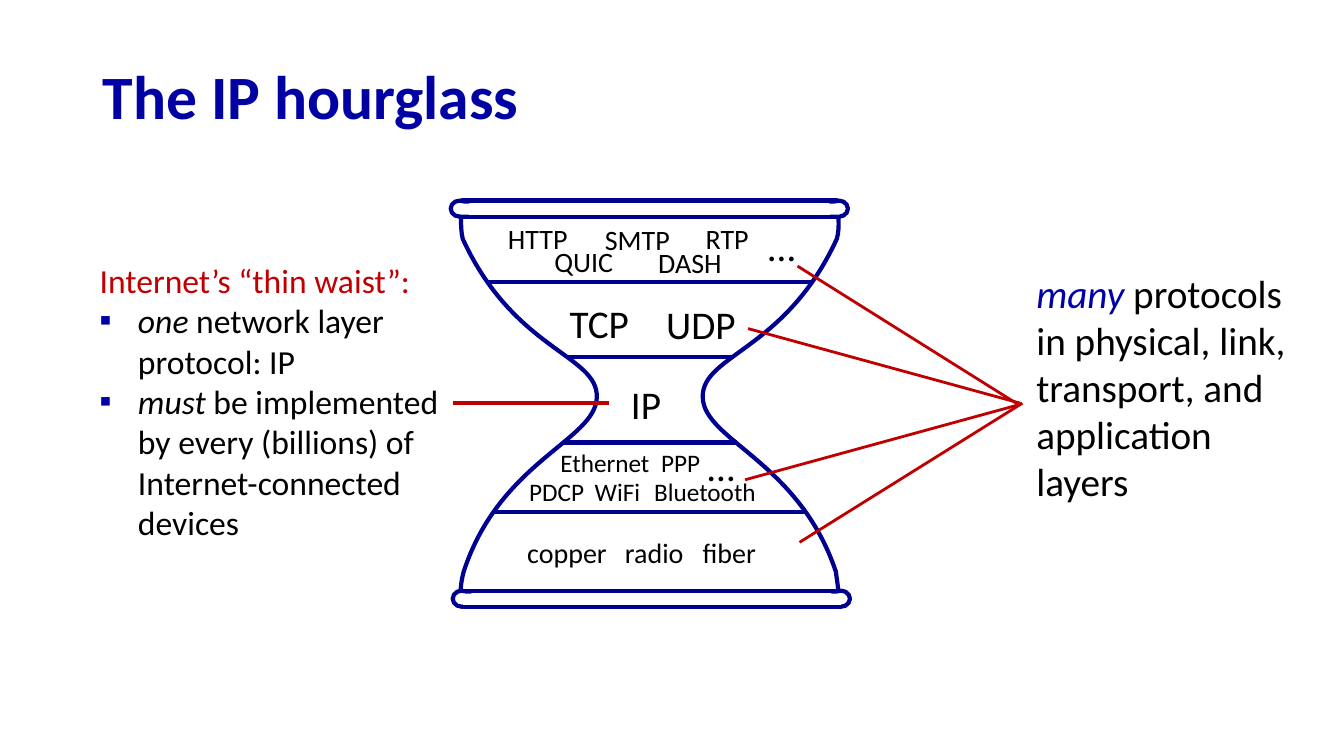
from lxml import etree
from pptx import Presentation
from pptx.dml.color import RGBColor
from pptx.enum.shapes import MSO_CONNECTOR as CONNECTOR, MSO_SHAPE as SHAPE
from pptx.enum.text import MSO_ANCHOR as ANCHOR, MSO_AUTO_SIZE as AUTO_SIZE
from pptx.oxml.ns import qn
from pptx.util import Pt

PX = 9144  # 100 px to the inch
FONT = "Calibri"
COLORS = {"title": "0000A3", "glass": "000090", "accent": "0000A8",
          "red": "C00000", "black": "000000", "white": "FFFFFF"}
LABEL_HEIGHTS = {28: 57, 20: 44, 18: 40}

# text, left, top, width
FITTED_LABELS = {
    28: [("IP", 616, 372, 50), ("TCP", 555, 292, 89), ("UDP", 651, 293, 90)],
    20: [("HTTP", 494, 215, 80), ("SMTP", 590, 216, 85), ("QUIC", 540, 238, 79),
         ("DASH", 643, 239, 84), ("RTP", 690, 215, 63)],
}
WRAPPED_LABELS = {
    28: [("…", 752, 216, 56), ("…", 692, 434, 56)],
    18: [("Ethernet", 546, 439, 134), ("PPP", 646, 439, 66), ("PDCP", 515, 468, 84),
         ("WiFi", 580, 468, 89), ("Bluetooth", 639, 468, 130)],
}
# Start point, then control, control, end for each Bézier piece
GLASS_SIDES = [
    [(458, 198), (458, 208), (456, 225), (459, 237), (510, 348), (593, 352), (592, 394),
     (591, 437), (496, 457), (460, 567), (456, 582), (457, 589), (457, 599)],
    [(831, 198), (830, 211), (834, 222), (830, 237), (779, 348), (696, 352), (697, 394),
     (698, 437), (792, 457), (829, 567), (831, 582), (832, 584), (831, 597)],
]
LAYER_LINES = [(483, 806, 280), (563, 728, 354), (558, 731, 439), (490, 800, 508)]
RIMS = [(458, 199), (460, 586)]
MANY_LINES = [(793, 538, 1014, 400), (1011, 402, 791, 264),
              (1012, 400, 742, 326), (1009, 402, 739, 476)]


class SlideBuilder:
    def __init__(self, slide):
        self.shapes = slide.shapes

    @staticmethod
    def color(name):
        return RGBColor.from_string(COLORS[name])

    def stroke(self, shape, color, width):
        shape.line.color.rgb = self.color(color)
        shape.line.width = Pt(width)

    def box(self, kind, left, top, width, height, outlined=True):
        shape = self.shapes.add_shape(kind, left * PX, top * PX, width * PX, height * PX)
        shape.shadow.inherit = False
        shape.fill.solid()
        shape.fill.fore_color.rgb = self.color("white")
        if outlined:
            self.stroke(shape, "glass", 3)
        else:
            shape.line.fill.background()

    def curve(self, nodes):
        """Build a polyline on the nodes, then turn each three segments into a Bézier."""
        builder = self.shapes.build_freeform(*nodes[0], scale=PX)
        builder.add_line_segments(nodes[1:], close=False)
        shape = builder.convert_to_shape()
        shape.shadow.inherit = False
        shape.fill.background()
        self.stroke(shape, "glass", 3)
        segments = list(shape._element.iter(qn("a:lnTo")))
        outline = segments[0].getparent()
        for first in range(0, len(segments), 3):
            bezier = etree.SubElement(outline, qn("a:cubicBezTo"))
            for segment in segments[first:first + 3]:
                bezier.append(segment[0])
                outline.remove(segment)

    def line(self, x1, y1, x2, y2, color, width):
        connector = self.shapes.add_connector(
            CONNECTOR.STRAIGHT, x1 * PX, y1 * PX, x2 * PX, y2 * PX)
        self.stroke(connector, color, width)
        etree.SubElement(connector._element.spPr, qn("a:effectLst"))

    def rim(self, left, top):
        """Draw a bar with rounded ends, hiding the inner half of each end."""
        self.box(SHAPE.RECTANGLE, left, top, 372, 16)
        for end, cover in ((-11, -1), (365, 350)):
            self.box(SHAPE.OVAL, left + end, top, 18, 16)
            self.box(SHAPE.RECTANGLE, left + cover, top + 3, 24, 11, outlined=False)

    def text(self, left, top, width, height, paragraphs, size, wrap=True):
        """Each paragraph is a list of (text, color, italic) runs."""
        shape = self.shapes.add_textbox(left * PX, top * PX, width * PX, height * PX)
        frame = shape.text_frame
        frame.word_wrap = wrap
        frame.auto_size = AUTO_SIZE.SHAPE_TO_FIT_TEXT
        for number, runs in enumerate(paragraphs):
            paragraph = frame.add_paragraph() if number else frame.paragraphs[0]
            for text, color, italic in runs:
                run = paragraph.add_run()
                run.text = text
                run.font.name = FONT
                run.font.size = Pt(size)
                run.font.italic = italic
                run.font.color.rgb = self.color(color)
        return frame

    def labels(self, groups, wrap):
        for size, entries in groups.items():
            for text, left, top, width in entries:
                self.text(left, top, width, LABEL_HEIGHTS[size],
                          [[(text, "black", False)]], size, wrap)

    def tab_stops(self, paragraph, positions):
        stops = etree.SubElement(paragraph._p.get_or_add_pPr(), qn("a:tabLst"))
        for position in positions:
            etree.SubElement(stops, qn("a:tab"), pos=str(position * PX), algn="l")

    def bullet(self, paragraph):
        properties = paragraph._p.get_or_add_pPr()
        properties.set("marL", str(38 * PX))
        properties.set("indent", str(-38 * PX))
        bullet_color = etree.SubElement(properties, qn("a:buClr"))
        etree.SubElement(bullet_color, qn("a:srgbClr"), val=COLORS["accent"])
        etree.SubElement(properties, qn("a:buFont"), typeface=FONT)
        etree.SubElement(properties, qn("a:buChar"), char="▪")


def main():
    presentation = Presentation()
    presentation.slide_width = 1333 * PX
    presentation.slide_height = 750 * PX
    builder = SlideBuilder(presentation.slides.add_slide(presentation.slide_layouts[6]))

    title = builder.text(92, 50, 1150, 98, [[("The IP hourglass", "title", False)]], 44)
    title.auto_size = AUTO_SIZE.NONE
    title.vertical_anchor = ANCHOR.MIDDLE
    title.paragraphs[0].line_spacing = 0.9
    title.paragraphs[0].runs[0].font.bold = True

    for side in GLASS_SIDES:
        builder.curve(side)
    for left, right, y in LAYER_LINES:
        builder.line(left, y, right, y, "glass", 3)
    for left, top in RIMS:
        builder.rim(left, top)
    builder.labels(FITTED_LABELS, wrap=False)
    builder.labels(WRAPPED_LABELS, wrap=True)
    media = builder.text(513, 526, 289, 44,
                         [[("copper\tradio\tfiber", "black", False)]], 20)
    builder.tab_stops(media.paragraphs[0], (97, 174))

    waist = builder.text(89, 253, 361, 293, [
        [("Internet’s “thin waist”:", "red", False)],
        [("one", "black", True), (" network layer protocol: IP", "black", False)],
        [("must", "black", True),
         (" be implemented by every (billions) of Internet-connected devices",
          "black", False)],
    ], 24)
    for paragraph in waist.paragraphs[1:]:
        builder.bullet(paragraph)
    builder.line(449, 400, 604, 400, "red", 2.5)

    builder.text(1018, 262, 288, 246, [
        [("many", "accent", True),
         (" protocols in physical, link, transport, and application layers",
          "black", False)],
    ], 28)
    for ends in MANY_LINES:
        builder.line(*ends, "red", 2)

    presentation.save("out.pptx")


if __name__ == "__main__":
    main()
